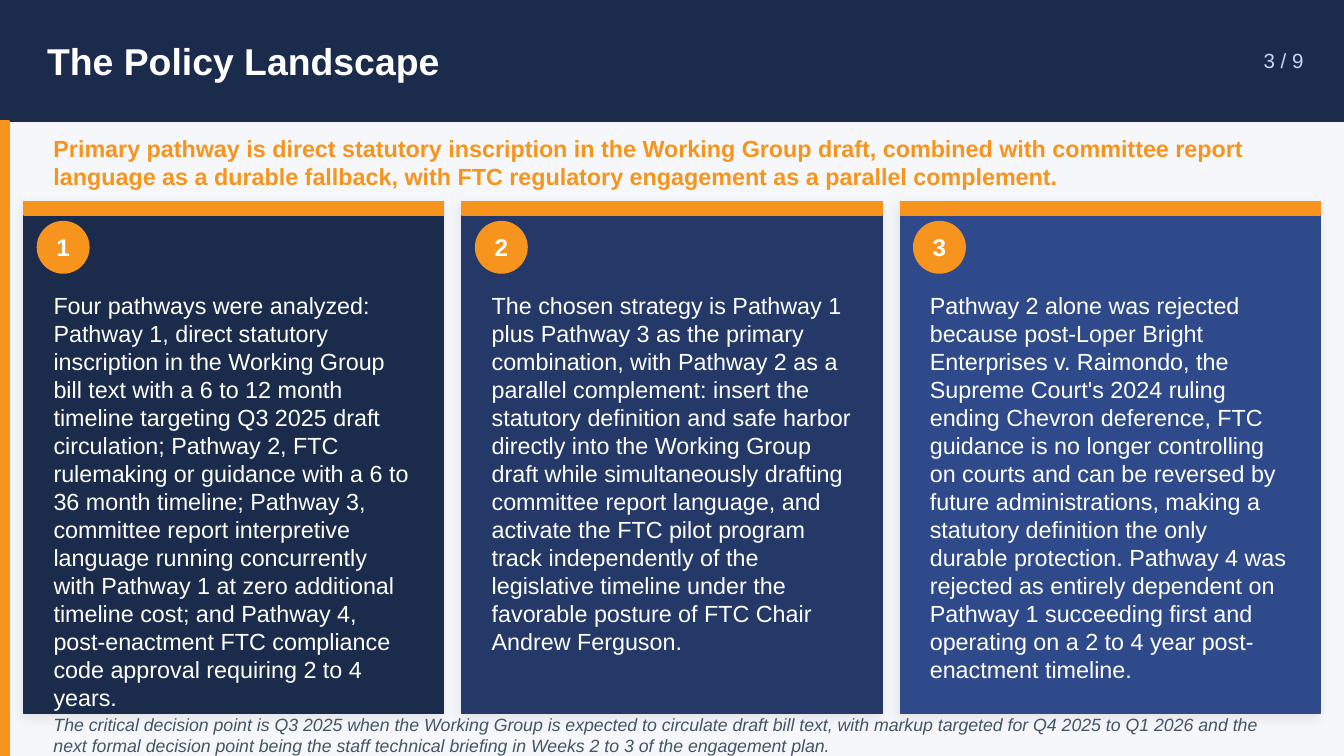
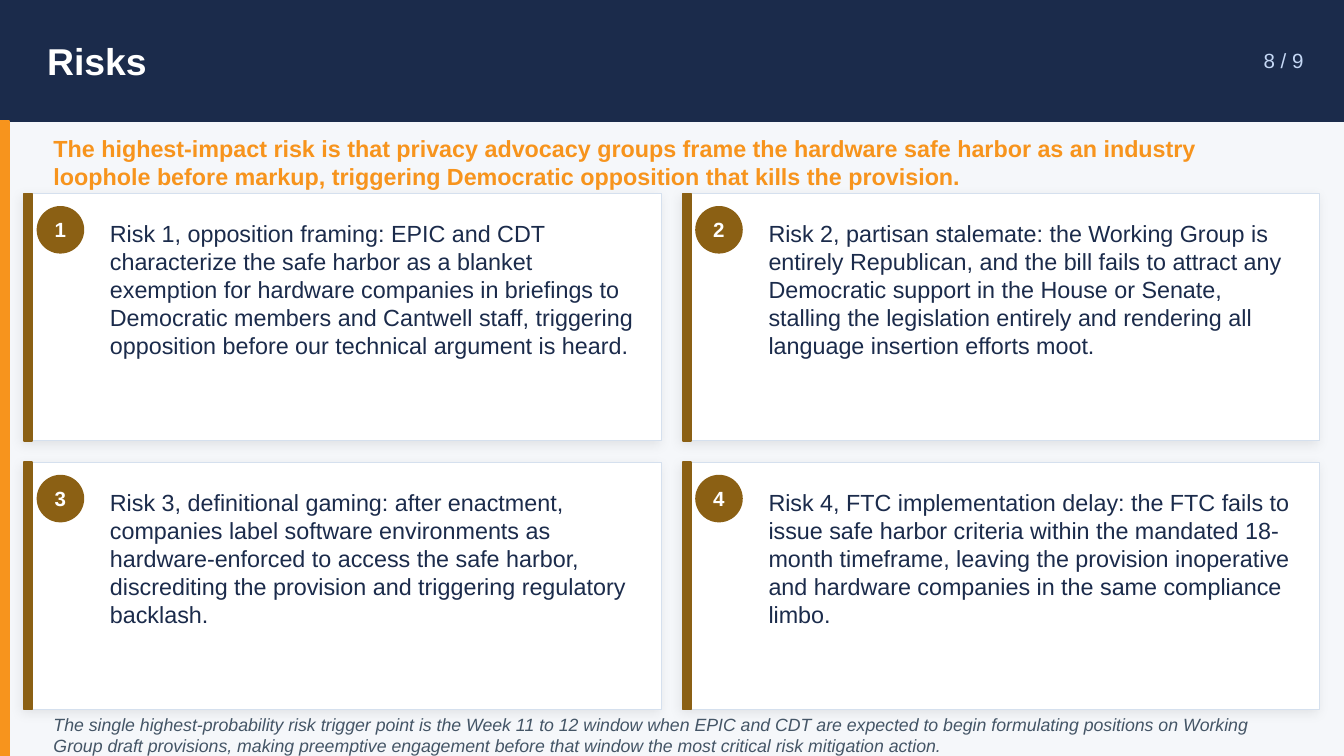
import pptx
import pptx.util
import pptx.dml.color
import pptx.enum.shapes
import pptx.enum.text
import pptx.oxml

Pt = pptx.util.Pt
hue = pptx.dml.color.RGBColor.from_string
Kind = pptx.enum.shapes.MSO_SHAPE
Side = pptx.enum.text.PP_ALIGN
Hold = pptx.enum.text.MSO_ANCHOR

NAVY, GOLD, BROWN, WHITE = "1B2B4B", "F7941D", "8B6014", "FFFFFF"
SHADE = (
    '<a:effectLst xmlns:a="http://schemas.openxmlformats.org/drawingml/2006/main">'
    '<a:outerShdw blurRad="76200" dist="25400" dir="8100000" algn="bl" rotWithShape="0">'
    '<a:srgbClr val="000000"><a:alpha val="8000"/></a:srgbClr>'
    "</a:outerShdw></a:effectLst>"
)


def draw(slide, kind, area, fill, line=None, width=1, shade=False):
    shape = slide.shapes.add_shape(kind, *map(Pt, area))
    shape.fill.solid()
    shape.fill.fore_color.rgb = hue(fill)
    shape.line.color.rgb = hue(line or fill)
    shape.line.width = Pt(width)
    shape.shadow.inherit = False
    if shade:
        props = shape.element.spPr
        props.remove(props.find(pptx.oxml.ns.qn("a:effectLst")))
        props.append(pptx.oxml.parse_xml(SHADE))
    return shape


def write(shape, text, size, tint, bold=False, slant=False, side=Side.LEFT,
          hold=Hold.MIDDLE, inset=None):
    frame = shape.text_frame
    frame.text = text
    frame.word_wrap = True
    frame.auto_size = pptx.enum.text.MSO_AUTO_SIZE.NONE
    frame.vertical_anchor = hold
    if inset is not None:
        frame.margin_left = frame.margin_right = Pt(inset)
        frame.margin_top = frame.margin_bottom = Pt(inset)
    para = frame.paragraphs[0]
    para.alignment = side
    font = para.runs[0].font
    font.name, font.size, font.color.rgb = "Arial", Pt(size), hue(tint)
    font.bold, font.italic = bold, slant


deck = pptx.Presentation()
deck.slide_width, deck.slide_height = Pt(720), Pt(405)
back = deck.slide_master.background.fill
back.solid()
back.fore_color.rgb = hue("F5F7FA")

heads = [
    ("The Policy Landscape", "3 / 9",
     "Primary pathway is direct statutory inscription in the Working Group draft, combined with committee report language as a durable fallback, with FTC regulatory engagement as a parallel complement."),
    ("Risks", "8 / 9",
     "The highest-impact risk is that privacy advocacy groups frame the hardware safe harbor as an industry loophole before markup, triggering Democratic opposition that kills the provision."),
]
for name, page, lead in heads:
    slide = deck.slides.add_slide(deck.slide_layouts[5])
    band = draw(slide, Kind.RECTANGLE, (0, 0, 720, 64.8), NAVY)
    title = slide.shapes.title
    title.left, title.top, title.width, title.height = map(Pt, (25.2, 0, 604.8, 64.8))
    write(title, name, 20, WHITE, bold=True, inset=0)
    band.element.addnext(title.element)
    box = slide.shapes.add_textbox(*map(Pt, (633.6, 0, 64.8, 64.8)))
    write(box, page, 11, "C5D8F5", side=Side.RIGHT, inset=0)
    draw(slide, Kind.RECTANGLE, (0, 64.8, 5.04, 340.2), GOLD)
    box = slide.shapes.add_textbox(*map(Pt, (21.6, 73.44, 676.8, 27.36)))
    write(box, lead, 12.5, GOLD, bold=True)

policy, risks = deck.slides

paths = [
    (NAVY, "Four pathways were analyzed: Pathway 1, direct statutory inscription in the Working Group bill text with a 6 to 12 month timeline targeting Q3 2025 draft circulation; Pathway 2, FTC rulemaking or guidance with a 6 to 36 month timeline; Pathway 3, committee report interpretive language running concurrently with Pathway 1 at zero additional timeline cost; and Pathway 4, post-enactment FTC compliance code approval requiring 2 to 4 years."),
    ("243968", "The chosen strategy is Pathway 1 plus Pathway 3 as the primary combination, with Pathway 2 as a parallel complement: insert the statutory definition and safe harbor directly into the Working Group draft while simultaneously drafting committee report language, and activate the FTC pilot program track independently of the legislative timeline under the favorable posture of FTC Chair Andrew Ferguson."),
    ("2E4A8A", "Pathway 2 alone was rejected because post-Loper Bright Enterprises v. Raimondo, the Supreme Court's 2024 ruling ending Chevron deference, FTC guidance is no longer controlling on courts and can be reversed by future administrations, making a statutory definition the only durable protection. Pathway 4 was rejected as entirely dependent on Pathway 1 succeeding first and operating on a 2 to 4 year post-enactment timeline."),
]
for i, (fill, text) in enumerate(paths):
    x = 12.96 + 234.72 * i
    draw(policy, Kind.RECTANGLE, (x, 108, 224.64, 274.32), fill, shade=True)
    draw(policy, Kind.RECTANGLE, (x, 108, 224.64, 7.2), GOLD)
    badge = draw(policy, Kind.OVAL, (x + 7.2, 118.8, 27.36, 27.36), GOLD)
    write(badge, str(i + 1), 13, WHITE, bold=True, side=Side.CENTER, inset=0)
    box = policy.shapes.add_textbox(*map(Pt, (x + 8.64, 152.64, 207.36, 220.32)))
    write(box, text, 12.5, WHITE, hold=Hold.TOP)

threats = [
    "Risk 1, opposition framing: EPIC and CDT characterize the safe harbor as a blanket exemption for hardware companies in briefings to Democratic members and Cantwell staff, triggering opposition before our technical argument is heard.",
    "Risk 2, partisan stalemate: the Working Group is entirely Republican, and the bill fails to attract any Democratic support in the House or Senate, stalling the legislation entirely and rendering all language insertion efforts moot.",
    "Risk 3, definitional gaming: after enactment, companies label software environments as hardware-enforced to access the safe harbor, discrediting the provision and triggering regulatory backlash.",
    "Risk 4, FTC implementation delay: the FTC fails to issue safe harbor criteria within the mandated 18-month timeframe, leaving the provision inoperative and hardware companies in the same compliance limbo.",
]
for i, text in enumerate(threats):
    row, col = divmod(i, 2)
    x, y = 12.96 + 352.8 * col, 103.68 + 144 * row
    draw(risks, Kind.RECTANGLE, (x, y, 341.28, 132.48), WHITE, "D5E0EE", 0.5, True)
    draw(risks, Kind.RECTANGLE, (x, y, 4.32, 132.48), BROWN)
    badge = draw(risks, Kind.OVAL, (x + 7.2, y + 7.2, 24.48, 24.48), BROWN)
    write(badge, str(i + 1), 11, WHITE, bold=True, side=Side.CENTER, inset=0)
    box = risks.shapes.add_textbox(*map(Pt, (x + 38.88, y + 10.08, 295.2, 116.64)))
    write(box, text, 12.5, NAVY, hold=Hold.TOP)

notes = [
    "The critical decision point is Q3 2025 when the Working Group is expected to circulate draft bill text, with markup targeted for Q4 2025 to Q1 2026 and the next formal decision point being the staff technical briefing in Weeks 2 to 3 of the engagement plan.",
    "The single highest-probability risk trigger point is the Week 11 to 12 window when EPIC and CDT are expected to begin formulating positions on Working Group draft provisions, making preemptive engagement before that window the most critical risk mitigation action.",
]
for slide, text in zip(deck.slides, notes):
    box = slide.shapes.add_textbox(*map(Pt, (21.6, 385.92, 676.8, 15.84)))
    write(box, text, 9.5, "445566", slant=True)

deck.save("out.pptx")
